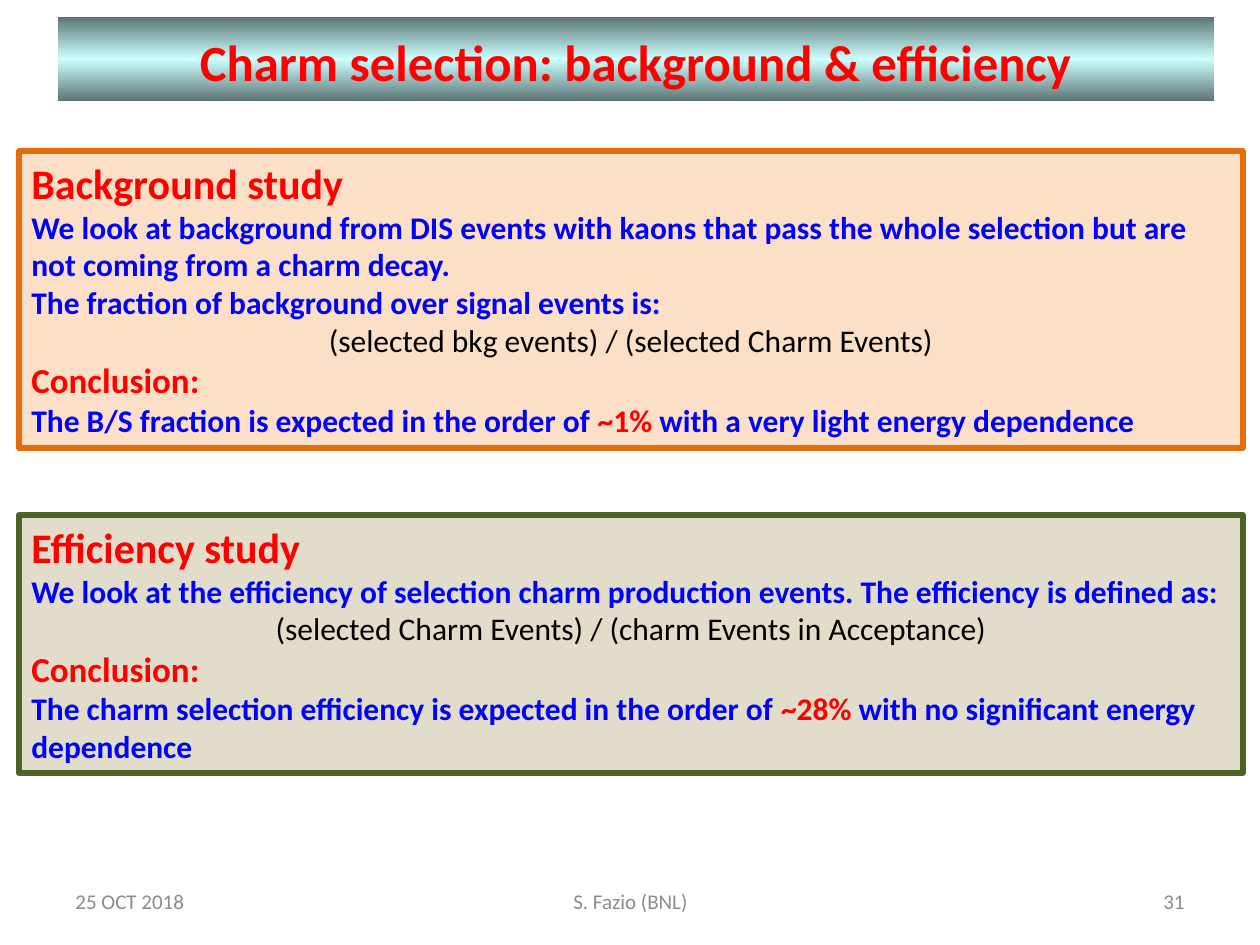
"""Build the slide on charm selection background and efficiency."""
from lxml import etree
from pptx import Presentation
from pptx import util as u
from pptx.dml.color import RGBColor
from pptx.enum import shapes, text
from pptx.oxml import ns

PX = 914400 / 126
RED, BLUE, BLACK, GREY = "FF0000", "0000FF", "000000", "8C8C8C"
LEFT, MID, RIGHT = text.PP_ALIGN.LEFT, text.PP_ALIGN.CENTER, text.PP_ALIGN.RIGHT


def hue(code):
    return RGBColor.from_string(code)


def write(para, words, size=18, tone=BLUE, bold=True, align=LEFT):
    para.alignment = align
    run = para.add_run()
    run.text = words
    run.font.name = "Calibri"
    run.font.size = u.Pt(size)
    run.font.bold = bold
    run.font.color.rgb = hue(tone)


deck = Presentation()
deck.slide_width = round(1260 * PX)
deck.slide_height = round(945 * PX)
slide = deck.slides.add_slide(deck.slide_layouts[6])

title = slide.shapes.add_shape(
    shapes.MSO_SHAPE.RECTANGLE, *[round(v * PX) for v in (58, 17, 1156, 84)])
title.shadow.inherit = False
title.line.fill.background()
title.fill.gradient()
title.fill.gradient_angle = 270
stops = title._element.spPr.find(".//" + ns.qn("a:gsLst"))
for stop in list(stops):
    stops.remove(stop)
for spot, code in ((0, "5E7575"), (50, "CCFFFF"), (100, "5E7575")):
    stop = etree.SubElement(stops, ns.qn("a:gs"), pos=str(spot * 1000))
    etree.SubElement(stop, ns.qn("a:srgbClr"), val=code)
frame = title.text_frame
frame.word_wrap = True
frame.vertical_anchor = text.MSO_ANCHOR.MIDDLE
frame.margin_left = frame.margin_right = round(14 * PX)
frame.margin_top = round(33 * PX)
frame.margin_bottom = round(6 * PX)
head = frame.paragraphs[0]
head.line_spacing = 0.5
write(head, "Charm selection: background & efficiency", size=29, tone=RED, align=MID)

for left, width, words, align in (
        (63, 294, "25 OCT 2018", LEFT),
        (431, 399, "S. Fazio (BNL)", MID),
        (903, 294, "31", RIGHT)):
    foot = slide.shapes.add_textbox(
        *[round(v * PX) for v in (left, 876, width, 50)])
    foot.text_frame.word_wrap = True
    foot.text_frame.vertical_anchor = text.MSO_ANCHOR.MIDDLE
    write(foot.text_frame.paragraphs[0], words, size=12, tone=GREY, bold=False, align=align)

top = {"size": 24, "tone": RED}
sub = {"size": 20, "tone": RED}
ratio = {"tone": BLACK, "bold": False, "align": MID}
panels = (
    (151, 297, "FAC090", "E46C0A", (
        [("Background study", top)],
        [("We look at background from DIS events with kaons that pass the whole "
          "selection but are not coming from a charm decay.", {})],
        [("The fraction of background over signal events is:", {})],
        [("(selected bkg events) / (selected Charm Events)", ratio)],
        [("Conclusion:", sub)],
        [("The B/S fraction is expected in the order of ", {}),
         ("~1%", {"tone": RED}),
         (" with a very light energy dependence", {})])),
    (515, 258, "C4BD97", "4F6228", (
        [("Efficiency study", top)],
        [("We look at the efficiency of selection charm production events. "
          "The efficiency is defined as:", {})],
        [("(selected Charm Events) / (charm Events in Acceptance)", ratio)],
        [("Conclusion:", sub)],
        [("The charm selection efficiency is expected in the order of ", {}),
         ("~28% ", {"tone": RED}),
         ("with no significant energy dependence", {})])))

for y, height, fill, edge, lines in panels:
    panel = slide.shapes.add_shape(
        shapes.MSO_SHAPE.RECTANGLE, *[round(v * PX) for v in (19, y, 1224, height)])
    panel.shadow.inherit = False
    panel.fill.solid()
    panel.fill.fore_color.rgb = hue(fill)
    tint = panel._element.spPr.find(ns.qn("a:solidFill"))[0]
    etree.SubElement(tint, ns.qn("a:alpha"), val="50000")
    panel.line.color.rgb = hue(edge)
    panel.line.width = u.Pt(3)
    frame = panel.text_frame
    frame.word_wrap = True
    frame.vertical_anchor = text.MSO_ANCHOR.TOP
    frame.auto_size = text.MSO_AUTO_SIZE.SHAPE_TO_FIT_TEXT
    for i, line in enumerate(lines):
        para = frame.add_paragraph() if i else frame.paragraphs[0]
        for words, form in line:
            write(para, words, **form)

deck.save("out.pptx")
